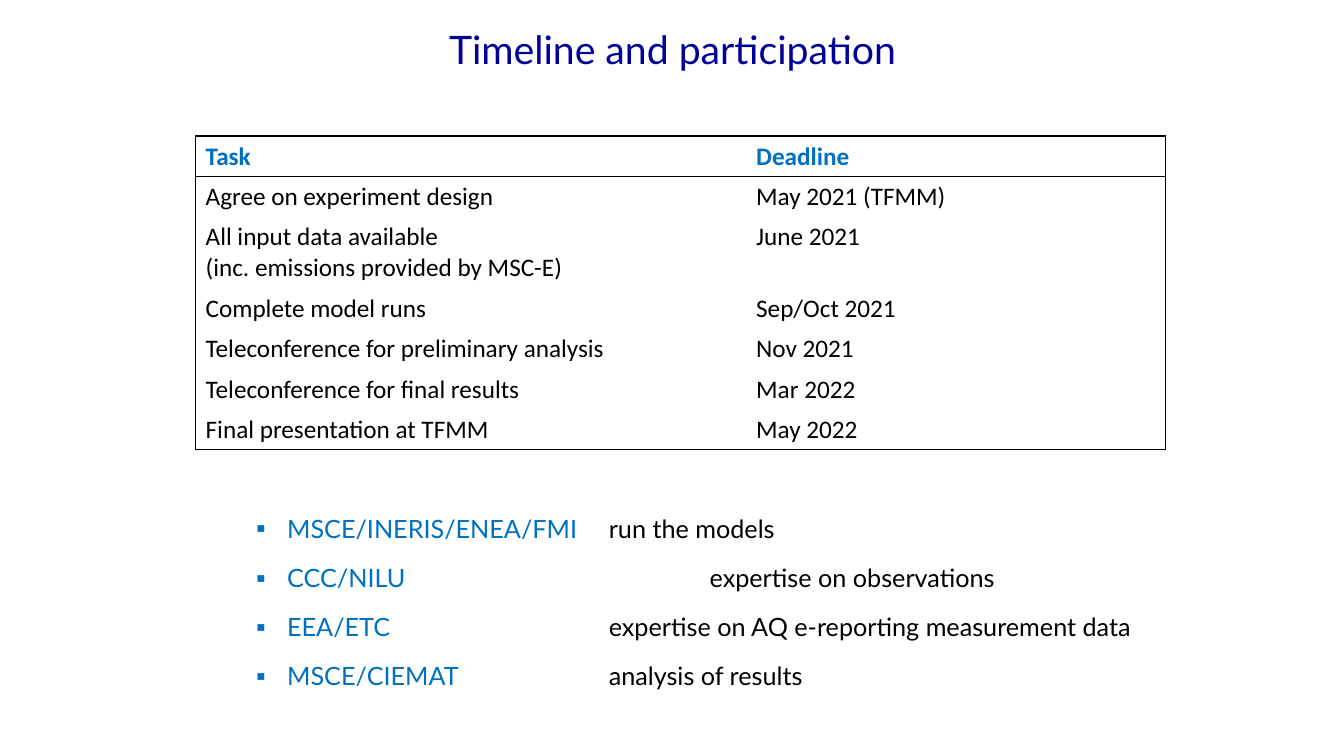
from lxml import etree
from pptx import Presentation
from pptx.dml.color import RGBColor
from pptx.enum.text import MSO_ANCHOR, PP_ALIGN
from pptx.oxml.ns import qn
from pptx.util import Inches, Pt

CENTER = PP_ALIGN.CENTER
MIDDLE = MSO_ANCHOR.MIDDLE

NAVY, BLUE, BLACK = "000099", "0070C0", "000000"

TIMELINE = [
    ("Task", "Deadline"),
    ("Agree on experiment design", "May 2021 (TFMM)"),
    ("All input data available \v(inc. emissions provided by MSC-E)", "June 2021"),
    ("Complete model runs", "Sep/Oct 2021"),
    ("Teleconference for preliminary analysis", "Nov 2021"),
    ("Teleconference for final results", "Mar 2022"),
    ("Final presentation at TFMM", "May 2022"),
]
COLUMN_WIDTHS = (5.46, 4.16)
ROW_HEIGHT, TWO_LINE_ROW_HEIGHT = 0.4, 0.71

# Participants, their role and the tab position of the role in inches
PARTICIPANTS = [
    ("MSCE/INERIS/ENEA/FMI", "run the models", 4),
    ("CCC/NILU", "expertise on observations", 5),
    ("EEA/ETC", "expertise on AQ e-reporting measurement data", 4),
    ("MSCE/CIEMAT", "analysis of results", 4),
]


def rgb(color):
    return RGBColor.from_string(color)


def set_attributes(target, values):
    for name, value in values.items():
        setattr(target, name, value)


def add_run(paragraph, text, color, **font_values):
    run = paragraph.add_run()
    run.text = text
    set_attributes(run.font, font_values)
    run.font.color.rgb = rgb(color)


def add_text_box(slide, left, top, width, height):
    box = slide.shapes.add_textbox(
        Inches(left), Inches(top), Inches(width), Inches(height))
    box.text_frame.word_wrap = True
    return box.text_frame


def add_title(slide, text):
    frame = add_text_box(slide, 1.67, 0.15, 10, 0.67)
    frame.vertical_anchor = MIDDLE
    paragraph = frame.paragraphs[0]
    paragraph.alignment = CENTER
    add_run(paragraph, text, NAVY, name="Lato", size=Pt(28))


def set_borders(cell, visible_sides):
    """Draw thin black lines on the given sides (L, R, T, B) and none elsewhere."""
    properties = cell._tc.get_or_add_tcPr()
    for position, side in enumerate("LRTB"):
        line = etree.Element(qn(f"a:ln{side}"), w=str(Pt(1)))
        if side in visible_sides:
            fill = etree.SubElement(line, qn("a:solidFill"))
            etree.SubElement(fill, qn("a:srgbClr"), val=BLACK)
        else:
            etree.SubElement(line, qn("a:noFill"))
        properties.insert(position, line)


def add_timeline_table(slide):
    table = slide.shapes.add_table(
        len(TIMELINE), len(COLUMN_WIDTHS), Inches(1.94), Inches(1.35),
        Inches(sum(COLUMN_WIDTHS)), Inches(3.11)).table
    table.horz_banding = False
    for column, width in zip(table.columns, COLUMN_WIDTHS):
        column.width = Inches(width)
    last_row = len(TIMELINE) - 1
    for row_index, texts in enumerate(TIMELINE):
        two_lines = "\v" in texts[0]
        table.rows[row_index].height = Inches(
            TWO_LINE_ROW_HEIGHT if two_lines else ROW_HEIGHT)
        is_header = row_index == 0
        for column_index, text in enumerate(texts):
            cell = table.cell(row_index, column_index)
            cell.fill.background()
            sides = "LR"[column_index]
            if row_index <= 1:
                sides += "T"
            if row_index in (0, last_row):
                sides += "B"
            set_borders(cell, sides)
            paragraph = cell.text_frame.paragraphs[0]
            for line_index, line in enumerate(text.split("\v")):
                if line_index:
                    paragraph.add_line_break()
                add_run(paragraph, line, BLUE if is_header else BLACK,
                        name="Calibri", size=Pt(18), bold=is_header)


def add_bullet_and_tab(paragraph, tab_position):
    properties = paragraph._p.get_or_add_pPr()
    properties.set("marL", str(Inches(0.81)))
    properties.set("indent", str(Inches(-0.31)))
    color = etree.SubElement(properties, qn("a:buClr"))
    etree.SubElement(color, qn("a:srgbClr"), val=BLUE)
    etree.SubElement(properties, qn("a:buFont"), typeface="Lato")
    etree.SubElement(properties, qn("a:buChar"), char="▪")
    tabs = etree.SubElement(properties, qn("a:tabLst"))
    etree.SubElement(tabs, qn("a:tab"), pos=str(Inches(tab_position)), algn="l")


def add_participants(slide):
    frame = add_text_box(slide, 1.94, 5.02, 10.24, 1.87)
    for index, (names, role, tab_position) in enumerate(PARTICIPANTS):
        paragraph = frame.paragraphs[0] if index == 0 else frame.add_paragraph()
        add_bullet_and_tab(paragraph, tab_position)
        set_attributes(paragraph, {
            "level": 1,
            "line_spacing": 1.07,
            "space_before": Pt(6 if index else 0),
            "space_after": Pt(6),
        })
        add_run(paragraph, names, BLUE, name="Lato", size=Pt(18))
        add_run(paragraph, "\t" + role, BLACK, name="Lato", size=Pt(18))


def main():
    presentation = Presentation()
    set_attributes(presentation, {
        "slide_width": Inches(13.33), "slide_height": Inches(7.5)})
    slide = presentation.slides.add_slide(presentation.slide_layouts[6])
    add_title(slide, "Timeline and participation")
    add_participants(slide)
    add_timeline_table(slide)
    presentation.save("out.pptx")


if __name__ == "__main__":
    main()
